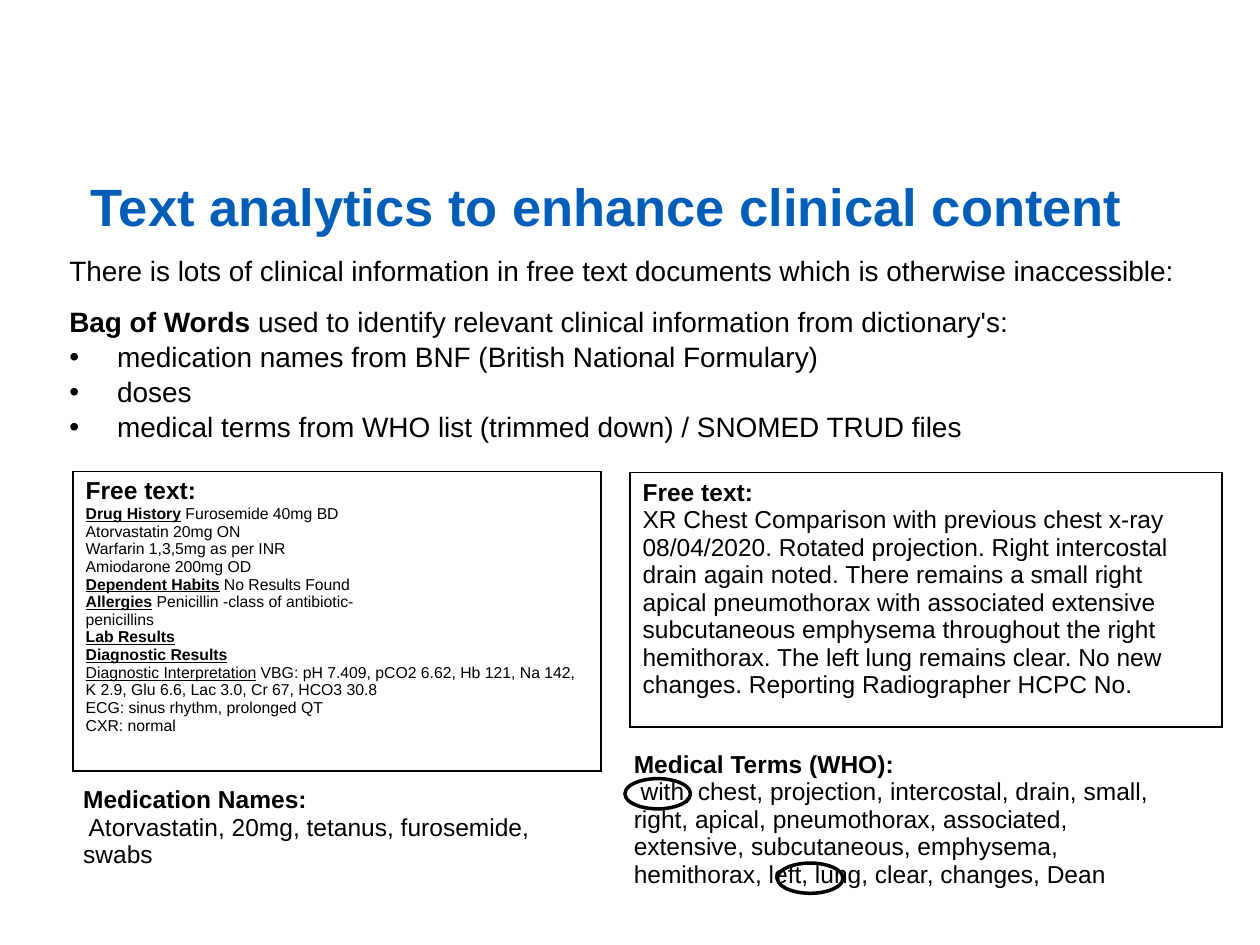
"""Build the slide on text analytics for clinical content."""
from copy import deepcopy
from dataclasses import dataclass

from lxml import etree
from pptx import Presentation
from pptx import util as u
from pptx.dml.color import RGBColor
from pptx.enum import shapes, text
from pptx.oxml import ns

FONT = "Arial"
COLORS = {"title": "005EB8", "ink": "000000"}


@dataclass
class Span:
    words: str
    size: float = 14
    bold: bool = False
    underline: bool = False
    color: str = "ink"


@dataclass
class Panel:
    left: float
    top: float
    width: float
    height: float
    paragraphs: list[list[Span]]
    bordered: bool = False
    anchor: text.MSO_ANCHOR = text.MSO_ANCHOR.MIDDLE


def add_run(paragraph, words: str, span: Span):
    run = paragraph.add_run()
    run.text = words
    run.font.name = FONT
    run.font.size = u.Pt(span.size)
    run.font.bold = span.bold
    run.font.underline = span.underline
    run.font.color.rgb = RGBColor.from_string(COLORS[span.color])
    return run


def add_span(paragraph, span: Span) -> None:
    first, *others = span.words.split("\n")
    run = add_run(paragraph, first, span)
    for line in others:
        paragraph.add_line_break()
        paragraph._p[-1].append(deepcopy(run._r.rPr))
        run = add_run(paragraph, line, span)


def fill_frame(frame, paragraphs: list[list[Span]]) -> None:
    for index, spans in enumerate(paragraphs):
        paragraph = frame.add_paragraph() if index else frame.paragraphs[0]
        for span in spans:
            add_span(paragraph, span)


def clear_margins(frame) -> None:
    frame.word_wrap = True
    frame.auto_size = text.MSO_AUTO_SIZE.NONE
    frame.vertical_anchor = text.MSO_ANCHOR.TOP
    frame.margin_left = frame.margin_right = frame.margin_top = frame.margin_bottom = 0


def add_bullet(paragraph) -> None:
    properties = paragraph._p.get_or_add_pPr()
    properties.set("marL", str(u.Inches(0.38)))
    properties.set("indent", str(u.Inches(-0.38)))
    etree.SubElement(properties, ns.qn("a:buFont"), typeface=FONT)
    etree.SubElement(properties, ns.qn("a:buChar"), char="•")


def add_borders(cell) -> None:
    properties = cell._tc.get_or_add_tcPr()
    for index, side in enumerate(("lnL", "lnR", "lnT", "lnB")):
        line = etree.Element(ns.qn(f"a:{side}"), w=str(u.Pt(1)))
        fill = etree.SubElement(line, ns.qn("a:solidFill"))
        etree.SubElement(fill, ns.qn("a:srgbClr"), val=COLORS["ink"])
        properties.insert(index, line)


def add_panel(slide, panel: Panel) -> None:
    table = slide.shapes.add_table(
        1, 1, u.Inches(panel.left), u.Inches(panel.top),
        u.Inches(panel.width), u.Inches(panel.height)).table
    table.first_row = table.horz_banding = False
    cell = table.cell(0, 0)
    cell.fill.background()
    cell.vertical_anchor = panel.anchor
    fill_frame(cell.text_frame, panel.paragraphs)
    if panel.bordered:
        add_borders(cell)


def add_ring(slide, left: float, top: float) -> None:
    ring = slide.shapes.add_shape(
        shapes.MSO_SHAPE.OVAL, u.Inches(left), u.Inches(top), u.Inches(0.52), u.Inches(0.24))
    ring.shadow.inherit = False
    ring.fill.background()
    ring.line.color.rgb = RGBColor.from_string(COLORS["ink"])
    ring.line.width = u.Pt(2)


def add_title(slide) -> None:
    title = slide.shapes.title
    title.left, title.top = u.Inches(0.72), u.Inches(1.38)
    title.width, title.height = u.Inches(8.61), u.Inches(0.5)
    clear_margins(title.text_frame)
    fill_frame(title.text_frame, [[Span(
        "Text analytics to enhance clinical content", 30, True, color="title")]])
    title.text_frame.paragraphs[0].alignment = text.PP_ALIGN.LEFT


def add_body(slide) -> None:
    box = slide.shapes.add_textbox(u.Inches(0.55), u.Inches(2.01), u.Inches(9.22), u.Inches(1.6))
    frame = box.text_frame
    clear_margins(frame)
    bullets = ["medication names from BNF (British National Formulary)", "doses",
               "medical terms from WHO list (trimmed down) / SNOMED TRUD files"]
    fill_frame(frame, [
        [Span("There is lots of clinical information in free text documents "
              "which is otherwise inaccessible:", 16)],
        [Span("Bag of Words ", 16, True),
         Span("used to identify relevant clinical information from dictionary's:", 16)],
        *([Span(bullet, 16)] for bullet in bullets)])
    for paragraph in frame.paragraphs[1:]:
        paragraph.space_before = u.Pt(0.8)
    frame.paragraphs[1].line_spacing = 1.5
    for paragraph in frame.paragraphs[2:]:
        add_bullet(paragraph)


def heading(words: str) -> list[Span]:
    return [Span(words, bold=True)]


def entry(label: str, words: str = "", bold: bool = True) -> list[Span]:
    spans = [Span(label, 9, bold, True)]
    return spans + [Span(words, 9)] if words else spans


MEDICATIONS = Panel(0.56, 6.13, 4.17, 0.88, [
    heading("Medication Names:"),
    [Span(" Atorvastatin, 20mg, tetanus, furosemide, swabs")]])
HISTORY = Panel(0.58, 3.74, 4.19, 2.38, [
    heading("Free text:"),
    entry("Drug History", " Furosemide 40mg BD\nAtorvastatin 20mg ON\n"
          "Warfarin 1,3,5mg as per INR\nAmiodarone 200mg OD"),
    entry("Dependent Habits", " No Results Found"),
    entry("Allergies", " Penicillin -class of antibiotic-"),
    [Span("penicillins", 9)],
    entry("Lab Results"),
    entry("Diagnostic Results"),
    entry("Diagnostic Interpretation",
          " VBG: pH 7.409, pCO2 6.62, Hb 121, Na 142, K 2.9, Glu 6.6, Lac 3.0, Cr 67, "
          "HCO3 30.8\nECG: sinus rhythm, prolonged QT\nCXR: normal", bold=False),
], True, text.MSO_ANCHOR.TOP)
TERMS = Panel(4.93, 5.79, 4.4, 1.43, [
    heading("Medical Terms (WHO):"),
    [Span(" with, chest, projection, intercostal, drain, small, right, apical, pneumothorax, "
          "associated, extensive, subcutaneous, emphysema, hemithorax, left, lung, clear, "
          "changes, Dean")]])
REPORT = Panel(5, 3.75, 4.7, 2.02, [
    heading("Free text:"),
    [Span("XR Chest Comparison with previous chest x-ray 08/04/2020. Rotated projection. "
          "Right intercostal drain again noted. There remains a small right apical "
          "pneumothorax with associated extensive subcutaneous emphysema throughout the "
          "right hemithorax. The left lung remains clear. No new changes. Reporting "
          "Radiographer HCPC No.")],
], True, text.MSO_ANCHOR.TOP)


def main() -> None:
    presentation = Presentation()
    presentation.slide_width, presentation.slide_height = u.Inches(10), u.Inches(7.5)
    slide = presentation.slides.add_slide(presentation.slide_layouts[5])
    add_title(slide)
    add_body(slide)
    for panel in (MEDICATIONS, HISTORY, TERMS):
        add_panel(slide, panel)
    for left, top in ((4.96, 6.18), (6.17, 6.85)):
        add_ring(slide, left, top)
    add_panel(slide, REPORT)
    presentation.save("out.pptx")


if __name__ == "__main__":
    main()
